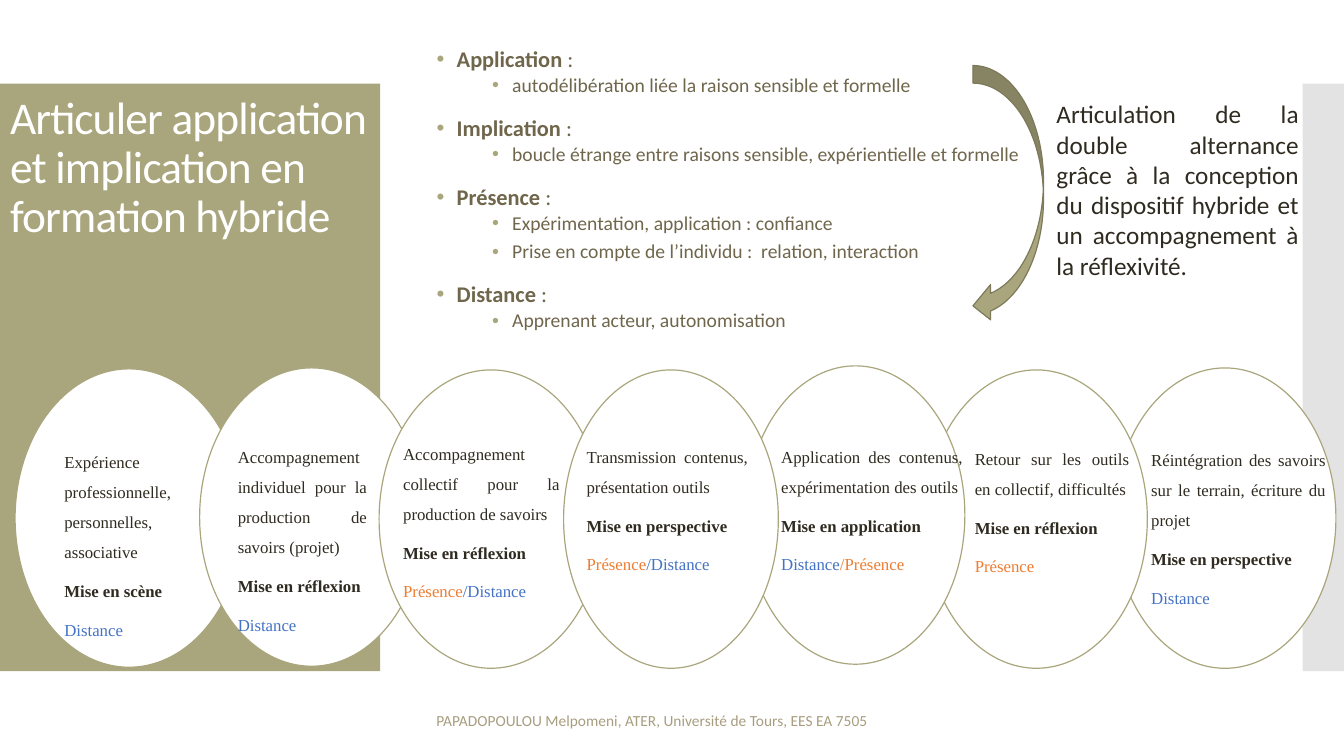
"""Build the slide on linking application and implication in hybrid training."""
from lxml.etree import SubElement
from pptx import Presentation
from pptx.dml.color import RGBColor
from pptx.enum.shapes import MSO_SHAPE as SHAPE
from pptx.enum.text import MSO_ANCHOR as ANCHOR, MSO_AUTO_SIZE as AUTO_SIZE, PP_ALIGN as ALIGN
from pptx.oxml.ns import qn
from pptx.util import Pt

PX = 9144
WHITE = RGBColor(0xFF, 0xFF, 0xFF)
OLIVE = RGBColor(0xA9, 0xA5, 0x7C)
DARK_OLIVE = RGBColor(0x7D, 0x7A, 0x5C)
GREY = RGBColor(0xC8, 0xC8, 0xC8)
BROWN = RGBColor(0x6F, 0x66, 0x4C)
SAND = RGBColor(0xA8, 0x9D, 0x7F)
INK = RGBColor(0x2F, 0x2B, 0x20)
BLUE = RGBColor(0x44, 0x72, 0xC4)
ORANGE = RGBColor(0xED, 0x7D, 0x31)
MODE_COLOURS = {"Présence": ORANGE, "Distance": BLUE}


def draw(kind, left, top, width, height, fill, line=None):
    shape = slide.shapes.add_shape(kind, left * PX, top * PX, width * PX, height * PX)
    shape.shadow.inherit = False
    shape.fill.solid()
    shape.fill.fore_color.rgb = fill
    if line:
        shape.line.color.rgb = line
        shape.line.width = Pt(0.85)
    else:
        shape.line.fill.background()
    return shape


def style(run, size, colour, font="Calibri", bold=False):
    run.font.name = font
    run.font.size = Pt(size)
    run.font.color.rgb = colour
    run.font.bold = bold


prs = Presentation()
prs.slide_width, prs.slide_height = 1333 * PX, 750 * PX
slide = prs.slides.add_slide(prs.slide_layouts[1])
title, themes = slide.placeholders

title_panel = draw(SHAPE.RECTANGLE, 0, 83, 377, 583, OLIVE)
side_band = draw(SHAPE.RECTANGLE, 1292, 83, 41, 583, GREY)
band_colour = side_band._element.spPr.find(qn("a:solidFill"))[0]
SubElement(band_colour, qn("a:alpha"), val="50000")
for panel in (side_band, title_panel):
    slide.shapes._spTree.insert(2, panel._element)

title.left, title.top, title.width, title.height = 0, 82 * PX, 395 * PX, 171 * PX
title.text_frame.text = "Articuler application et implication en formation hybride"
title.text_frame.vertical_anchor = ANCHOR.MIDDLE
title.text_frame.auto_size = AUTO_SIZE.NONE
heading = title.text_frame.paragraphs[0]
heading.alignment = ALIGN.LEFT
heading.line_spacing = 0.9
style(heading.runs[0], 32.4, WHITE)
heading.runs[0].font._element.set("spc", "-60")

THEMES = [
    ("Application", ["autodélibération liée la raison sensible et formelle"]),
    ("Implication", ["boucle étrange entre raisons sensible, expérientielle et formelle"]),
    ("Présence", ["Expérimentation, application : confiance",
                  "Prise en compte de l’individu :  relation, interaction"]),
    ("Distance", ["Apprenant acteur, autonomisation"]),
]
themes.left, themes.top, themes.width, themes.height = 423 * PX, 19 * PX, 800 * PX, 339 * PX
themes.text_frame.vertical_anchor = ANCHOR.MIDDLE
themes.text_frame.auto_size = AUTO_SIZE.NONE
themes.text_frame.text = "\n".join("\n".join([theme, *details]) for theme, details in THEMES)
theme_names = [theme for theme, details in THEMES]
for item in themes.text_frame.paragraphs:
    is_theme = item.text in theme_names
    item.level = 0 if is_theme else 1
    item.alignment = ALIGN.JUSTIFY
    item.line_spacing = 0.9
    item.space_before = Pt(12 if is_theme else 2.5)
    item.space_after = Pt(0 if is_theme else 2.5)
    style(item.runs[0], 16 if is_theme else 14, BROWN, bold=is_theme)
    if is_theme:
        colon = item.add_run()
        colon.text = " :"
        style(colon, 16, BROWN)
    props = item._p.get_or_add_pPr()
    props.set("marL", str((20 if is_theme else 75) * PX))
    props.set("indent", str(-20 * PX))
    bullet_colour = SubElement(props, qn("a:buClr"))
    SubElement(bullet_colour, qn("a:srgbClr"), val=str(OLIVE))
    SubElement(props, qn("a:buFont"), typeface="Arial")
    SubElement(props, qn("a:buChar"), char="•")

STEPS = [
    ((1105, 365, 220, 298), (1132, 431, 193, 204),
     "Réintégration des savoirs sur le terrain, écriture du projet",
     "Mise en perspective", "Distance"),
    ((918, 367, 220, 296), (957, 430, 173, 180),
     "Retour sur les outils en collectif, difficultés",
     "Mise en réflexion", "Présence"),
    ((15, 366, 226, 296), (54, 433, 170, 200),
     "Expérience professionnelle, personnelles, associative",
     "Mise en scène", "Distance"),
    ((198, 365, 222, 296), (226, 428, 148, 196),
     "Accompagnement individuel pour la production de savoirs (projet)",
     "Mise en réflexion", "Distance"),
    ((740, 363, 217, 296), (765, 428, 200, 190),
     "Application des contenus, expérimentation des outils",
     "Mise en application", "Distance/Présence"),
    ((376, 367, 222, 296), (390, 425, 175, 196),
     "Accompagnement collectif pour la production de savoirs",
     "Mise en réflexion", "Présence/Distance"),
    ((559, 367, 213, 296), (572, 428, 180, 188),
     "Transmission contenus, présentation outils",
     "Mise en perspective", "Présence/Distance"),
]
for oval, label, activity, stage, modes in STEPS:
    draw(SHAPE.OVAL, *oval, WHITE, OLIVE)
    step = slide.shapes.add_textbox(*(side * PX for side in label)).text_frame
    step.word_wrap = True
    step.text = f"{activity}\n{stage}\n"
    for line in step.paragraphs:
        line.alignment = ALIGN.JUSTIFY
        line.line_spacing = 1.5
        line.space_after = Pt(6)
        for run in line.runs:
            style(run, 12, INK, "Times New Roman", run.text == stage)
    for index, mode in enumerate(modes.split("/")):
        run = step.paragraphs[2].add_run()
        run.text = f"/{mode}" if index else mode
        style(run, 12, MODE_COLOURS[mode], "Times New Roman")

draw(SHAPE.CURVED_LEFT_ARROW, 965, 65, 70, 256, OLIVE, DARK_OLIVE)

NOTES = [
    ((1038, 93, 260, 192), ANCHOR.TOP, ALIGN.JUSTIFY, 18, INK,
     "Articulation de la double alternance grâce à la conception du dispositif hybride "
     "et un accompagnement à la réflexivité."),
    ((423, 695, 646, 40), ANCHOR.MIDDLE, ALIGN.LEFT, 11, SAND,
     "PAPADOPOULOU Melpomeni, ATER, Université de Tours, EES EA 7505"),
]
for place, anchor, alignment, size, colour, wording in NOTES:
    note = slide.shapes.add_textbox(*(side * PX for side in place)).text_frame
    note.word_wrap = True
    note.vertical_anchor = anchor
    note.text = wording
    note.paragraphs[0].alignment = alignment
    style(note.paragraphs[0].runs[0], size, colour)

prs.save("out.pptx")
